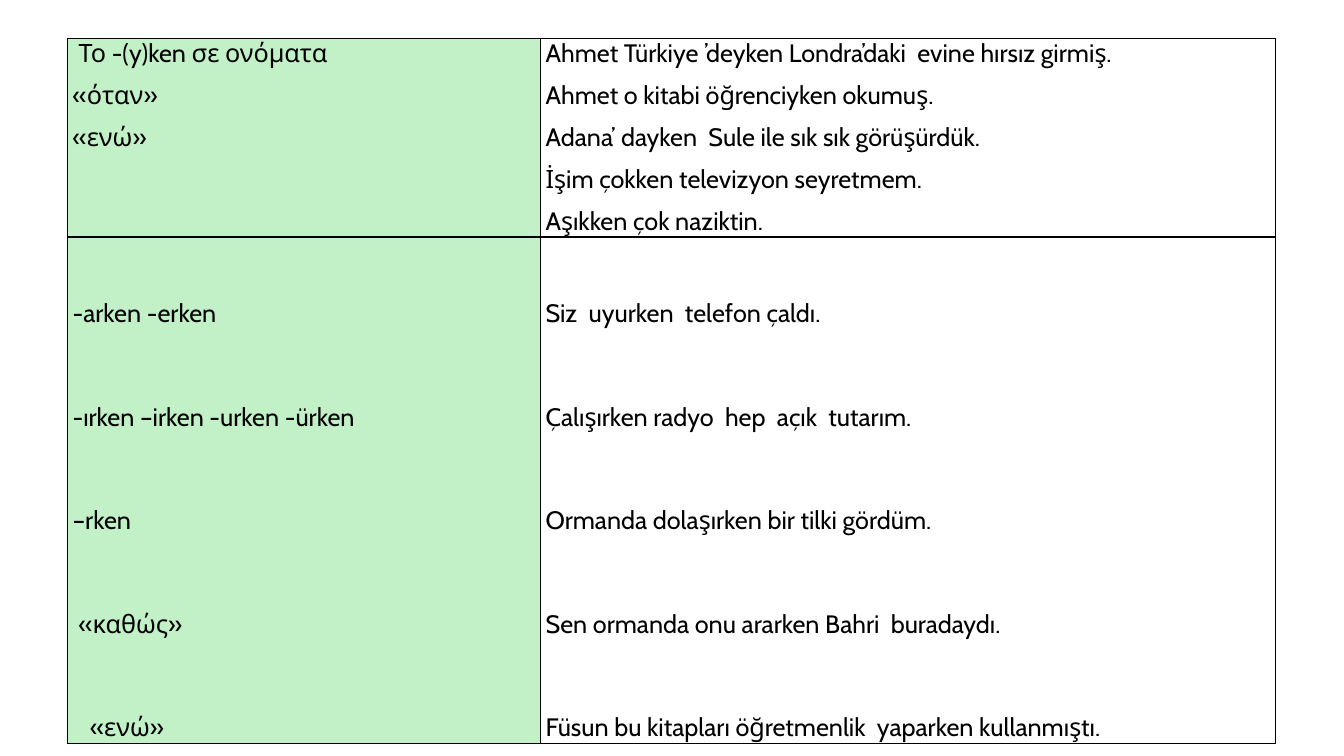
"""Builds a slide with a table of Turkish -ken forms and example sentences."""
from lxml import etree
from pptx import Presentation
from pptx import util as u
from pptx.dml.color import RGBColor
from pptx.oxml import ns

BLACK = RGBColor(0x00, 0x00, 0x00)
MINT = RGBColor(0xC2, 0xF1, 0xC8)

NOUN_FORMS = [("Το -(y)ken σε ονόματα", 0.15), ("«όταν»", 0), ("«ενώ»", 0)]
NOUN_EXAMPLES = [
    ("Ahmet Türkiye ’deyken Londra’daki  evine hırsız girmiş.", 0),
    ("Ahmet o kitabi öğrenciyken okumuş.", 0),
    ("Adana’ dayken  Sule ile sık sık görüşürdük.", 0),
    ("İşim çokken televizyon seyretmem.", 0),
    ("Aşıkken çok naziktin.", 0),
]
VERB_FORMS = [
    ("-arken -erken", 0),
    ("-ırken –irken -urken -ürken", 0),
    ("–rken", 0),
    ("«καθώς»", 0.15),
    ("«ενώ»", 0.44),
]
VERB_EXAMPLES = [
    ("Siz  uyurken  telefon çaldı.", 0),
    ("Çalışırken radyo  hep  açık  tutarım.", 0),
    ("Ormanda dolaşırken bir tilki gördüm.", 0),
    ("Sen ormanda onu ararken Bahri  buradaydı.", 0),
    ("Füsun bu kitapları öğretmenlik  yaparken kullanmıştı.", 0),
]


class GrammarSlide:
    """Holds the text style and the current slide."""

    font_name = "Cabin"
    font_size = u.Pt(18)
    space_after = u.Pt(8)
    border_width = u.Pt(1)

    def __init__(self, slide):
        """Keep the slide to draw on."""
        self.slide = slide

    def add_table(self, left, top, widths, heights):
        """Add an unbanded table with the given column widths and row heights."""
        frame = self.slide.shapes.add_table(
            len(heights), len(widths), u.Cm(left), u.Cm(top),
            u.Cm(sum(widths)), u.Cm(sum(heights)))
        table = frame.table
        table.first_row = table.horz_banding = False
        for column, width in zip(table.columns, widths):
            column.width = u.Cm(width)
        for row, height in zip(table.rows, heights):
            row.height = u.Cm(height)
        return table

    def add_borders(self, cell):
        """Draw a black line on every side of a cell."""
        properties = cell._tc.get_or_add_tcPr()
        for side in ("a:lnL", "a:lnR", "a:lnT", "a:lnB"):
            line = etree.SubElement(properties, ns.qn(side), w=str(self.border_width))
            ink = etree.SubElement(line, ns.qn("a:solidFill"))
            etree.SubElement(ink, ns.qn("a:srgbClr"), val=str(BLACK))

    def fill_cell(self, cell, entries, line_spacing, color=None):
        """Write indented entries into a cell and style it."""
        cell.margin_left = cell.margin_right = u.Cm(0.13)
        cell.margin_top = cell.margin_bottom = 0
        self.add_borders(cell)
        if color is None:
            cell.fill.background()
        else:
            cell.fill.solid()
            cell.fill.fore_color.rgb = color
        for index, (wording, indent) in enumerate(entries):
            frame = cell.text_frame
            entry = frame.add_paragraph() if index else frame.paragraphs[0]
            self.add_entry(entry, wording, indent, line_spacing)

    def add_entry(self, entry, wording, indent, line_spacing):
        """Write one paragraph in the slide's text style."""
        entry.space_after = self.space_after
        entry.line_spacing = line_spacing
        if indent:
            entry._p.get_or_add_pPr().set("marL", str(u.Cm(indent)))
        run = entry.add_run()
        run.text = wording
        run.font.name = self.font_name
        run.font.size = self.font_size
        run.font.color.rgb = BLACK


def main():
    """Build and save the presentation."""
    deck = Presentation()
    deck.slide_width, deck.slide_height = u.Cm(33.87), u.Cm(19.05)
    page = GrammarSlide(deck.slides.add_slide(deck.slide_layouts[6]))
    table = page.add_table(1.7, 0.97, widths=[11.92, 18.53], heights=[3.4, 10.97])
    sections = [(NOUN_FORMS, NOUN_EXAMPLES, 1), (VERB_FORMS, VERB_EXAMPLES, 3)]
    for row, (forms, examples, line_spacing) in enumerate(sections):
        page.fill_cell(table.cell(row, 0), forms, line_spacing, MINT)
        page.fill_cell(table.cell(row, 1), examples, line_spacing)
    deck.save("out.pptx")


if __name__ == "__main__":
    main()
